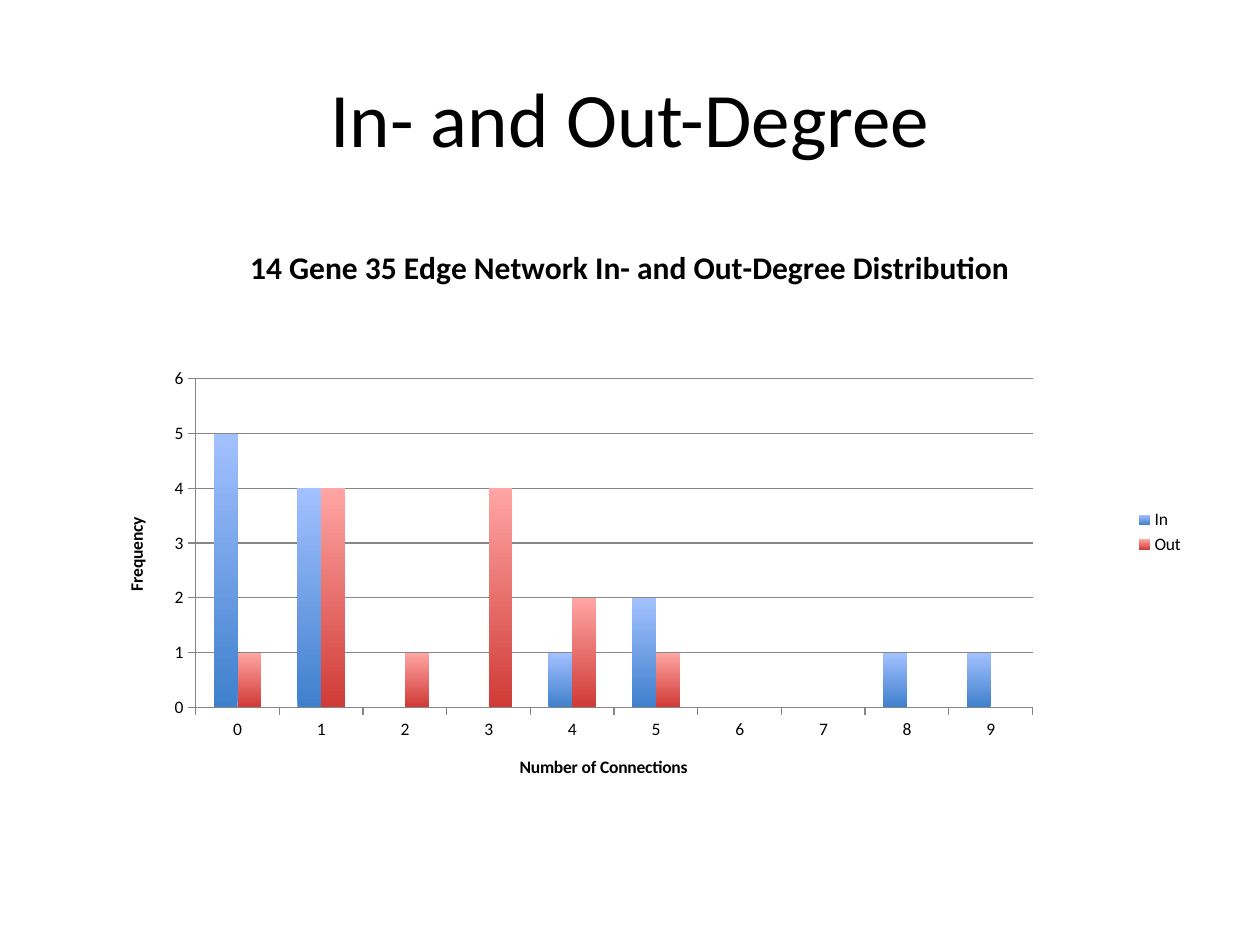
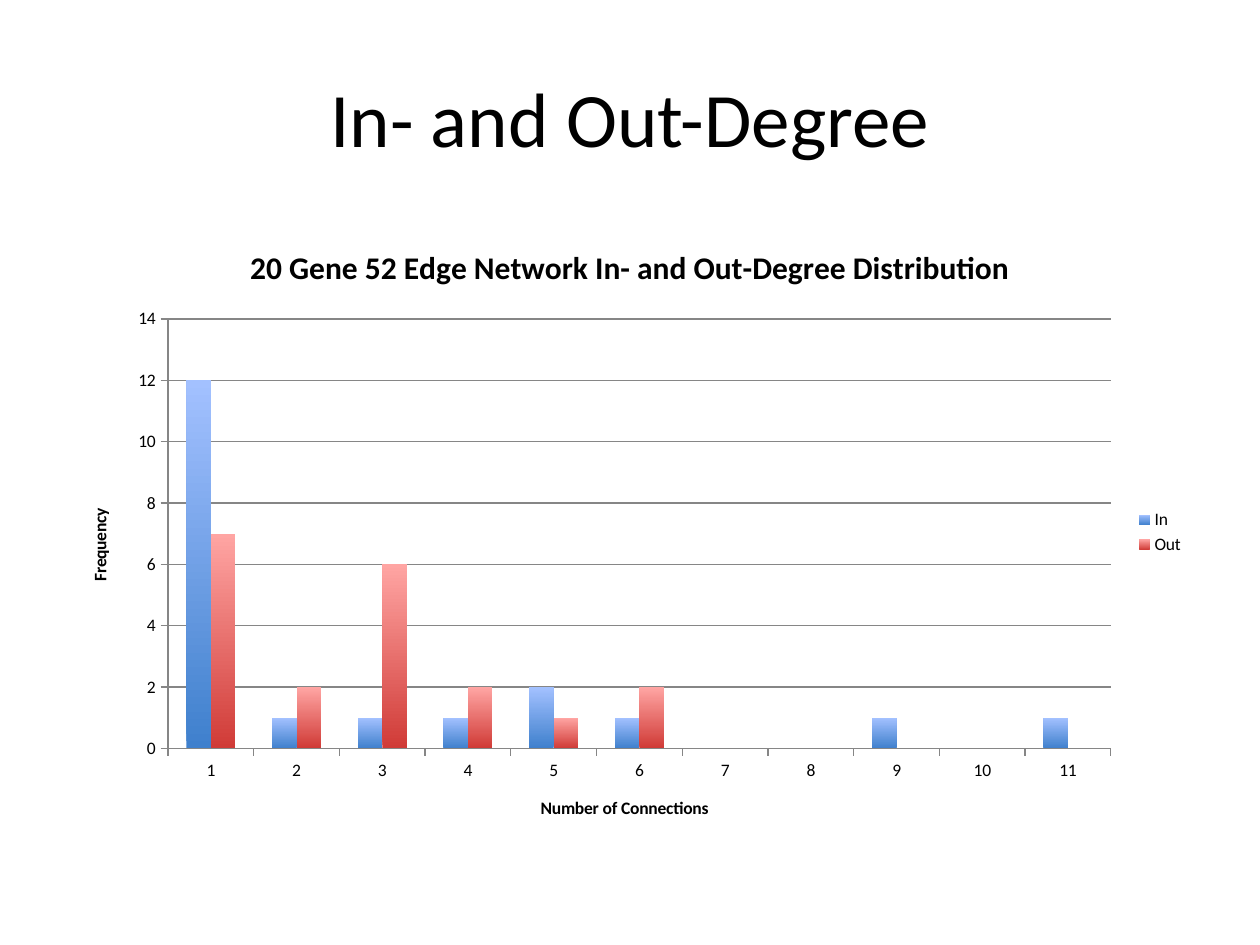
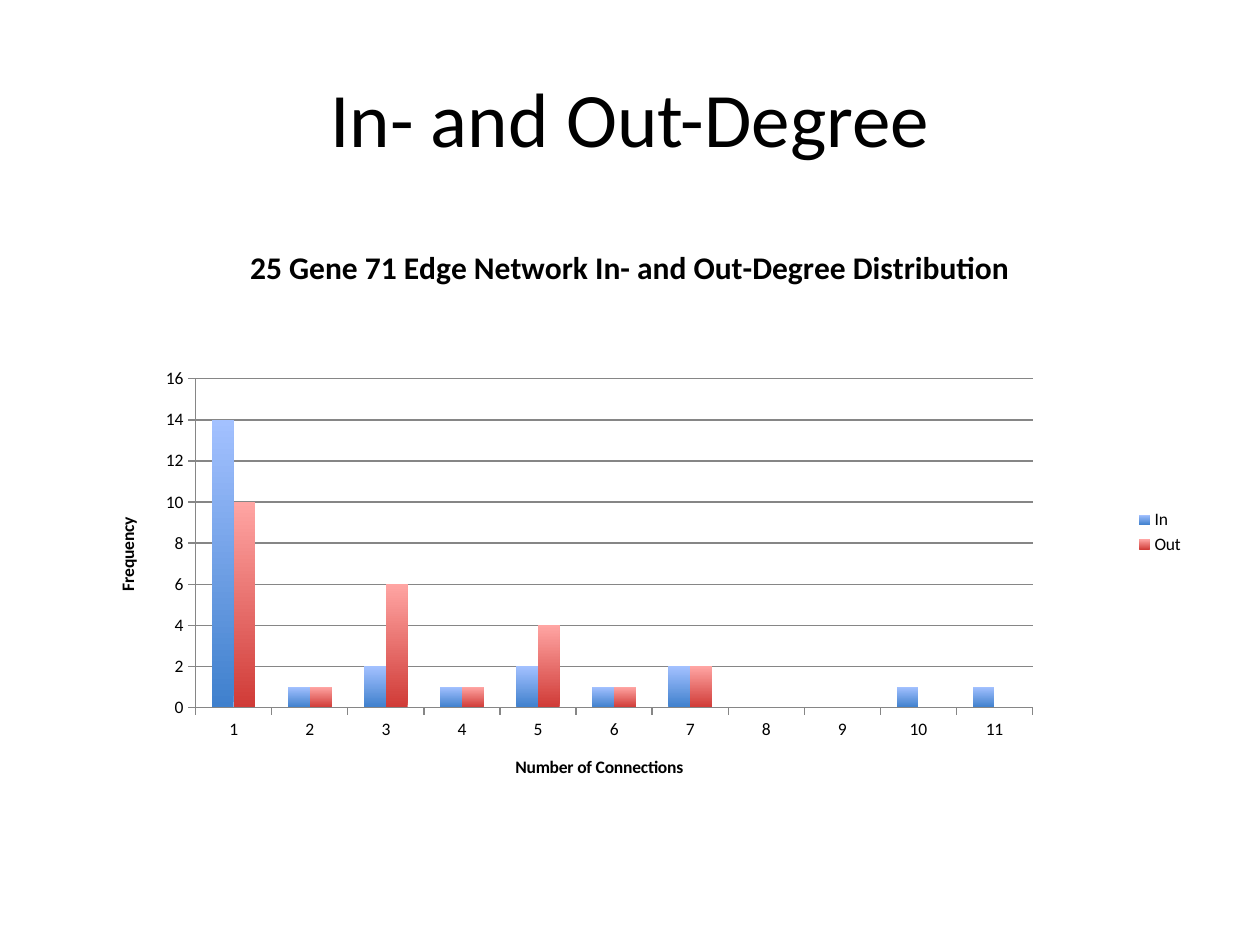
from lxml.etree import SubElement
from pptx import Presentation
from pptx.chart.data import CategoryChartData
from pptx.dml.color import RGBColor
from pptx.enum.chart import XL_CHART_TYPE, XL_LEGEND_POSITION, XL_TICK_MARK
from pptx.enum.text import MSO_ANCHOR, PP_ALIGN
from pptx.oxml.ns import qn
from pptx.util import Inches, Pt

FONT = "Calibri"
BLACK = "000000"
AXIS_GRAY = "868686"
SERIES_GRADIENTS = [("3F80CD", "A3C1FF"), ("D03B37", "FFA5A3")]
INSET_PLOT = {"x": 0.117, "y": 0.254, "w": 0.738, "h": 0.527}

NETWORKS = [
    (14, 35, range(10), [5, 4, 0, 0, 1, 2, 0, 0, 1, 1],
     [1, 4, 1, 4, 2, 1, None, None, None, None], INSET_PLOT),
    (20, 52, range(1, 12), [12, 1, 1, 1, 2, 1, 0, 0, 1, 0, 1],
     [7, 2, 6, 2, 1, 2, 0, 0, 0, 0, 0], None),
    (25, 71, range(1, 12), [14, 1, 2, 1, 2, 1, 2, 0, 0, 1, 1],
     [10, 1, 6, 1, 4, 1, 2, 0, 0, 0, 0], INSET_PLOT),
]


def color(value):
    return RGBColor.from_string(value)


def style_font(font, size, bold=False):
    font.name = FONT
    font.size = Pt(size)
    font.bold = bold
    font.color.rgb = color(BLACK)


def add_title(s, text):
    sp = s.shapes.add_textbox(Inches(0.5), Inches(0.3), Inches(9), Inches(1.25))
    tf = sp.text_frame
    tf.word_wrap = True
    tf.vertical_anchor = MSO_ANCHOR.MIDDLE
    p = tf.paragraphs[0]
    p.text = text
    p.alignment = PP_ALIGN.CENTER
    style_font(p.font, 44)


def set_heading(owner, text, size):
    tf = owner.text_frame
    p = tf.paragraphs[0]
    p.text = text
    style_font(p.font, size, bold=True)


def style_line(line):
    line.width = Pt(0.75)
    line.color.rgb = color(AXIS_GRAY)


def style_axis(axis, title):
    set_heading(axis.axis_title, title, 10)
    axis.major_tick_mark = XL_TICK_MARK.OUTSIDE
    axis.minor_tick_mark = XL_TICK_MARK.NONE
    style_font(axis.tick_labels.font, 10)
    style_line(axis.format.line)


def fill_series(series, gradient):
    fill = series.format.fill
    fill.gradient()
    fill.gradient_angle = 90
    for stop, value in zip(fill.gradient_stops, gradient):
        stop.color.rgb = color(value)
    series.invert_if_negative = False


def place_plot(chart, plot_box):
    area = chart.element.find(".//" + qn("c:plotArea"))
    for old in area.findall(qn("c:layout")):
        area.remove(old)
    layout = SubElement(area, qn("c:layout"))
    area.insert(0, layout)
    manual = SubElement(layout, qn("c:manualLayout"))
    settings = {"layoutTarget": "inner", "xMode": "edge", "yMode": "edge", **plot_box}
    for tag, value in settings.items():
        SubElement(manual, qn("c:" + tag)).set("val", str(value))


def add_degree_chart(s, title, degrees, in_counts, out_counts, plot_box):
    data = CategoryChartData()
    data.categories = [str(degree) for degree in degrees]
    data.add_series("In", in_counts)
    data.add_series("Out", out_counts)
    chart = s.shapes.add_chart(
        XL_CHART_TYPE.COLUMN_CLUSTERED,
        Inches(0.5), Inches(1.75), Inches(9), Inches(4.95), data).chart
    style_font(chart.font, 10)
    chart.has_title = True
    set_heading(chart.chart_title, title, 18)
    chart.chart_title.include_in_layout = False
    chart.has_legend = True
    chart.legend.position = XL_LEGEND_POSITION.RIGHT
    chart.legend.include_in_layout = False
    style_font(chart.legend.font, 10)
    style_axis(chart.category_axis, "Number of Connections")
    style_axis(chart.value_axis, "Frequency")
    chart.value_axis.has_major_gridlines = True
    style_line(chart.value_axis.major_gridlines.format.line)
    plot = chart.plots[0]
    plot.gap_width = 150
    plot.vary_by_categories = False
    for series, gradient in zip(plot.series, SERIES_GRADIENTS):
        fill_series(series, gradient)
    if plot_box:
        place_plot(chart, plot_box)


def main():
    prs = Presentation()
    prs.slide_width = Inches(10)
    prs.slide_height = Inches(7.5)
    for genes, edges, degrees, in_counts, out_counts, plot_box in NETWORKS:
        s = prs.slides.add_slide(prs.slide_layouts[6])
        add_title(s, "In- and Out-Degree")
        heading = f"{genes} Gene {edges} Edge Network In- and Out-Degree Distribution"
        add_degree_chart(s, heading, degrees, in_counts, out_counts, plot_box)
    prs.save("out.pptx")


if __name__ == "__main__":
    main()
